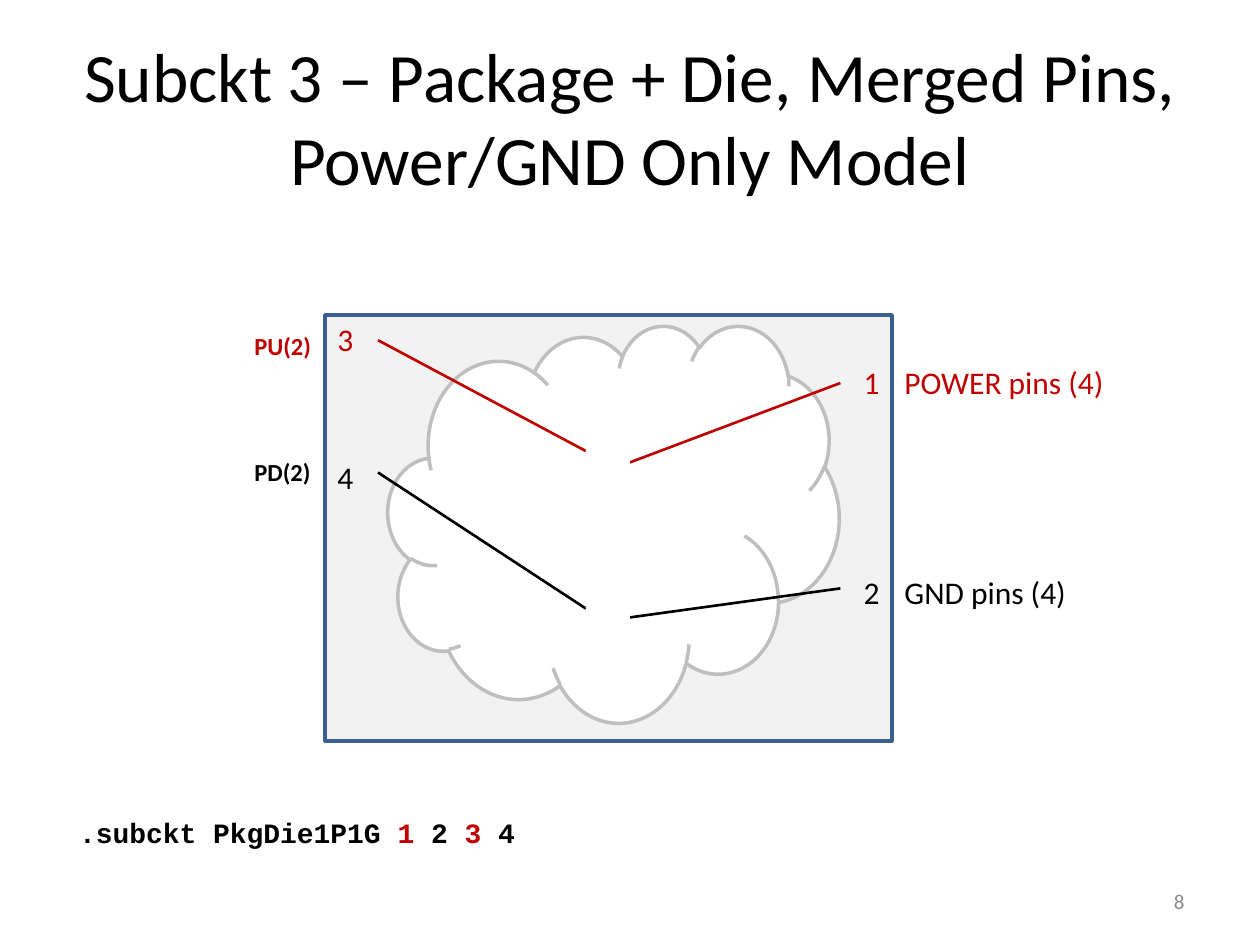
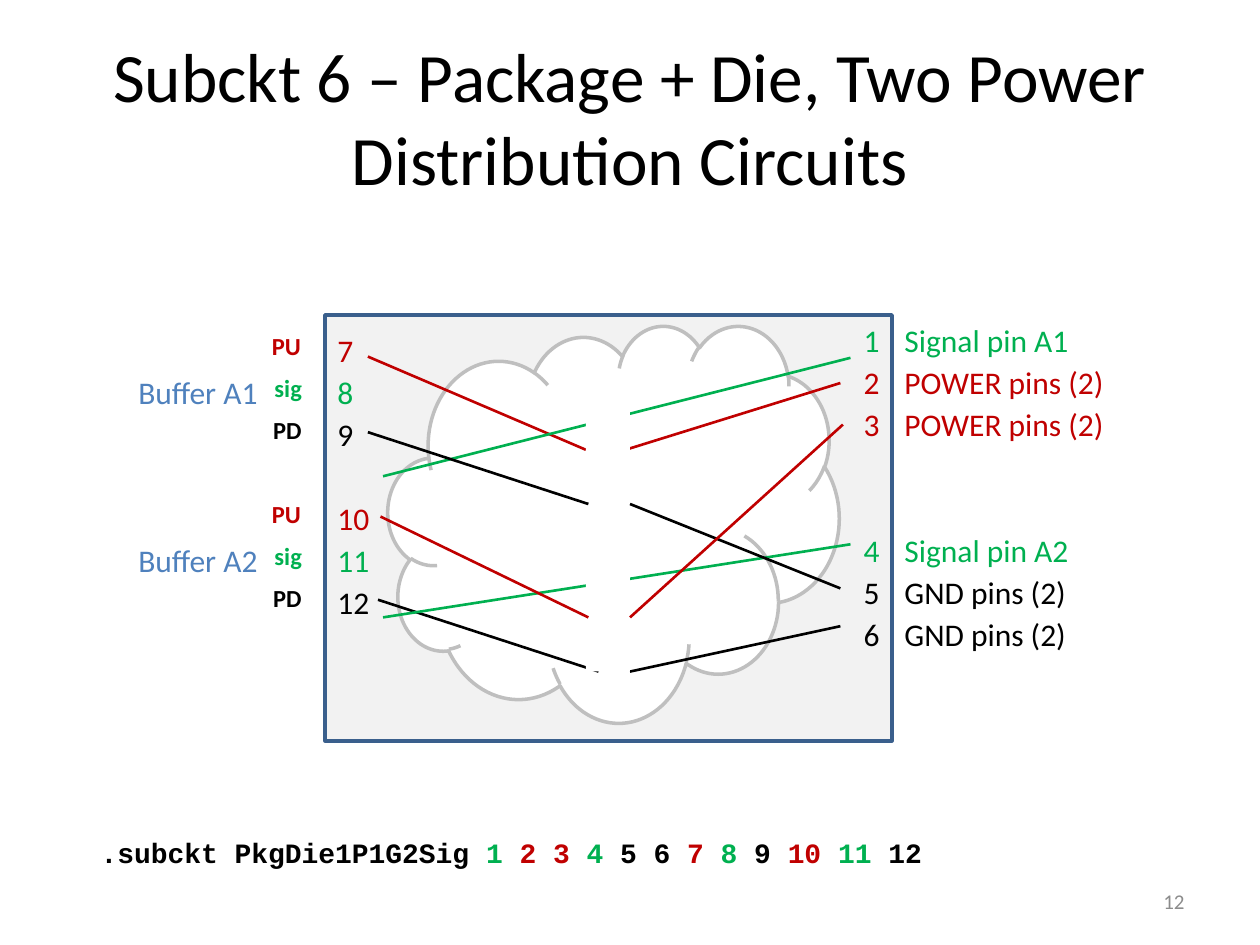
from pptx import Presentation
from pptx.dml.color import RGBColor
from pptx.enum.shapes import MSO_CONNECTOR, MSO_SHAPE
from pptx.enum.text import MSO_ANCHOR, PP_ALIGN
from pptx.oxml.ns import qn
from pptx.util import Inches, Pt

RECT, CLOUD = MSO_SHAPE.RECTANGLE, MSO_SHAPE.CLOUD
STRAIGHT = MSO_CONNECTOR.STRAIGHT
LEFT, CENTER, RIGHT = PP_ALIGN.LEFT, PP_ALIGN.CENTER, PP_ALIGN.RIGHT
TOP, MIDDLE = MSO_ANCHOR.TOP, MSO_ANCHOR.MIDDLE

BLACK = RGBColor(0x00, 0x00, 0x00)
WHITE = RGBColor(0xFF, 0xFF, 0xFF)
RED = RGBColor(0xC0, 0x00, 0x00)
GREEN = RGBColor(0x00, 0xB0, 0x50)
BLUE = RGBColor(0x4F, 0x81, 0xBD)
FRAME_BLUE = RGBColor(0x3A, 0x5F, 0x8C)
FRAME_FILL = RGBColor(0xF2, 0xF2, 0xF2)
CLOUD_GRAY = RGBColor(0xBF, 0xBF, 0xBF)
NUMBER_GRAY = RGBColor(0x8C, 0x8C, 0x8C)

TITLE = {"name": "Calibri", "size": Pt(39.6)}
BODY = {"name": "Calibri", "size": Pt(18)}
TERMINAL = {"name": "Calibri", "size": Pt(14), "bold": True}
CODE = {"name": "Courier New", "size": Pt(16), "bold": True}
FOOTER = {"name": "Calibri", "size": Pt(12)}

ROW = 1 / 3
ROW_PT = 24
PIN_TOP = 2.5
PIN_LABEL_X = 7.08


def add_run(p, text, color, style):
    r = p.add_run()
    r.text = text
    for key, value in style.items():
        setattr(r.font, key, value)
    r.font.color.rgb = color


def add_box(s, x, y, w, h, wrap=False, anchor=TOP):
    tf = s.shapes.add_textbox(Inches(x), Inches(y), Inches(w), Inches(h)).text_frame
    tf.word_wrap = wrap
    tf.vertical_anchor = anchor
    return tf


def add_text(s, x, y, w, h, runs, style, align=LEFT, wrap=False, anchor=TOP):
    p = add_box(s, x, y, w, h, wrap, anchor).paragraphs[0]
    p.alignment = align
    for text, color in runs:
        add_run(p, text, color, style)


def add_block(s, kind, x, y, w, h, fill, line=None):
    sp = s.shapes.add_shape(kind, Inches(x), Inches(y), Inches(w), Inches(h))
    sp.shadow.inherit = False
    sp.fill.solid()
    sp.fill.fore_color.rgb = fill
    if line is None:
        sp.line.fill.background()
    else:
        sp.line.color.rgb = line
        sp.line.width = Pt(2)


def add_wires(s, wires):
    for x1, y1, x2, y2, color in wires:
        cx = s.shapes.add_connector(STRAIGHT, Inches(x1), Inches(y1), Inches(x2), Inches(y2))
        cx.line.color.rgb = color
        cx.line.width = Pt(1.5)
        sp_pr = cx._element.spPr
        sp_pr.append(sp_pr.makeelement(qn("a:effectLst"), {}))


def add_pin_column(s, x, y, w, h, pins, align=LEFT):
    tf = add_box(s, x, y, w, h, wrap=True)
    for i, (number, color, gap) in enumerate(pins):
        p = tf.paragraphs[0] if i == 0 else tf.add_paragraph()
        p.alignment = align
        p.space_before = Pt(gap)
        p.space_after = Pt(2.4)
        add_run(p, number, color, BODY)


def add_pin_labels(s, labels):
    for row, text, color, w in labels:
        add_text(s, PIN_LABEL_X, PIN_TOP + row * ROW, w, 0.4, [(text, color)], BODY)


def add_buffer(s, name, top):
    add_text(s, 1, top + ROW, 1.16, 0.4, [(name, BLUE)], BODY)
    terminals = [("PU", RED, 0.44), ("sig", GREEN, 0.42), ("PD", BLACK, 0.43)]
    for i, (text, color, w) in enumerate(terminals):
        add_text(s, 2.5 - w, top + i * ROW, w, 0.34, [(text, color)], TERMINAL)


def add_circuit_slide(prs, title, number, wires, front_wires=()):
    s = prs.slides.add_slide(prs.slide_layouts[6])
    add_block(s, RECT, 2.58, 2.5, 4.5, 3.38, FRAME_FILL, FRAME_BLUE)
    add_block(s, CLOUD, 3.08, 2.58, 3.58, 3.15, WHITE, CLOUD_GRAY)
    add_text(s, 0.5, 0.3, 9, 1.25, [(title, BLACK)], TITLE, CENTER, True, MIDDLE)
    add_wires(s, wires)
    add_block(s, RECT, 4.65, 2.96, 0.35, 2.37, WHITE)
    add_wires(s, front_wires)
    add_text(s, 7.17, 6.95, 2.33, 0.4, [(number, NUMBER_GRAY)], FOOTER, RIGHT, True, MIDDLE)
    return s


def add_merged_pins_slide(prs):
    s = add_circuit_slide(
        prs, "Subckt 3 – Package + Die, Merged Pins, Power/GND Only Model", "8",
        [(3, 2.7, 4.65, 3.58, RED), (3, 3.75, 4.65, 4.83, BLACK),
         (5, 3.67, 6.67, 3.04, RED), (5, 4.9, 6.67, 4.67, BLACK)])
    add_pin_column(s, 6.58, PIN_TOP + ROW, 0.5, 2.1,
                   [("1", RED, 0), ("2", BLACK, 4 * ROW_PT)], RIGHT)
    add_pin_column(s, 2.58, 2.49, 0.6, 1.51, [("3", RED, 0), ("4", BLACK, 55)])
    add_pin_labels(s, [(1, "POWER pins (4)", RED, 1.8), (6, "GND pins (4)", BLACK, 1.5)])
    for text, color, y in [("PU(2)", RED, 2.58), ("PD(2)", BLACK, 3.58)]:
        add_text(s, 1.92, y, 0.66, 0.34, [(text, color)], TERMINAL)
    add_text(s, 0.53, 6.42, 3.85, 0.37,
             [(".subckt PkgDie1P1G ", BLACK), ("1", RED), (" 2 ", BLACK),
              ("3", RED), (" 4", BLACK)], CODE)


def add_two_power_slide(prs):
    s = add_circuit_slide(
        prs, "Subckt 6 – Package + Die, Two Power Distribution Circuits", "12",
        [(2.92, 2.83, 4.65, 3.57, RED), (3, 4.76, 4.75, 5.33, BLACK),
         (3.04, 3.78, 6.75, 2.84, GREEN), (3.04, 4.9, 6.75, 4.32, GREEN),
         (4.9, 3.59, 6.67, 3.04, RED), (5, 5.33, 6.67, 4.97, BLACK)],
        [(2.92, 3.43, 4.67, 4, BLACK), (5, 4, 6.67, 4.67, BLACK),
         (3.02, 4.1, 4.67, 4.9, RED), (5, 4.9, 6.69, 3.37, RED)])
    add_pin_column(s, 6.58, PIN_TOP, 0.5, 3.38,
                   [("1", GREEN, 0), ("2", RED, 0), ("3", RED, 0),
                    ("4", GREEN, 2 * ROW_PT), ("5", BLACK, 0), ("6", BLACK, 0)], RIGHT)
    add_pin_column(s, 2.58, 2.58, 0.6, 2.39,
                   [("7", RED, 0), ("8", GREEN, 0), ("9", BLACK, 0),
                    ("10", RED, ROW_PT), ("11", GREEN, 0), ("12", BLACK, 0)])
    add_pin_labels(s, [
        (0, "Signal pin A1", GREEN, 1.52), (1, "POWER pins (2)", RED, 1.8),
        (2, "POWER pins (2)", RED, 1.8), (5, "Signal pin A2", GREEN, 1.52),
        (6, "GND pins (2)", BLACK, 1.5), (7, "GND pins (2)", BLACK, 1.5)])
    for i, name in enumerate(["Buffer A1", "Buffer A2"]):
        add_buffer(s, name, 2.58 + i * 4 * ROW)
    add_text(s, 0.7, 6.58, 6.82, 0.37,
             [(".subckt PkgDie1P1G2Sig ", BLACK), ("1 ", GREEN), ("2 3 ", RED),
              ("4 ", GREEN), ("5 6 ", BLACK), ("7 ", RED), ("8", GREEN),
              (" 9 ", BLACK), ("10 ", RED), ("11", GREEN), (" 12", BLACK)], CODE)


def main():
    prs = Presentation()
    prs.slide_width, prs.slide_height = Inches(10), Inches(7.5)
    add_merged_pins_slide(prs)
    add_two_power_slide(prs)
    prs.save("out.pptx")


if __name__ == "__main__":
    main()
